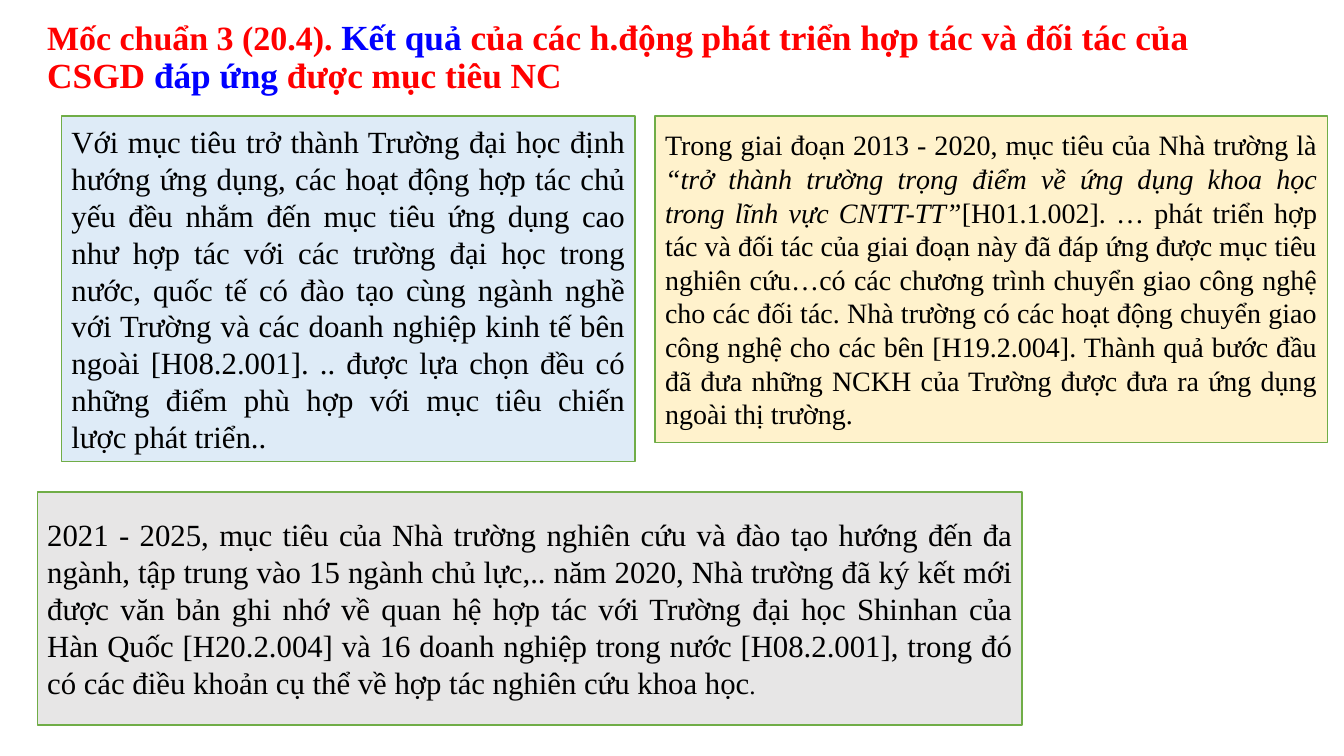
from dataclasses import dataclass

from pptx import Presentation
from pptx.dml.color import RGBColor
from pptx.enum.shapes import MSO_SHAPE
from pptx.enum.text import MSO_ANCHOR, PP_ALIGN
from pptx.util import Cm, Pt

RECTANGLE = MSO_SHAPE.RECTANGLE
MIDDLE = MSO_ANCHOR.MIDDLE
LEFT, JUSTIFY = PP_ALIGN.LEFT, PP_ALIGN.JUSTIFY


@dataclass(frozen=True)
class Theme:
    font: str = "Times New Roman"
    red: str = "FF0000"
    blue: str = "0000FF"
    ink: str = "000000"
    border: str = "70AD47"
    goal_fill: str = "DEEBF7"
    past_fill: str = "FFF2CC"
    plan_fill: str = "E7E6E6"
    label_size: float = 24.3
    title_size: float = 25.2
    body_size: float = 22
    compact_size: float = 20
    stop_size: float = 18


class SlideBuilder:
    def __init__(self, page, theme):
        self.page = page
        self.theme = theme

    def add_text(self, shape, align, spans):
        """Fill a shape with one paragraph of (text, size, colour, bold, italic) spans."""
        frame = shape.text_frame
        frame.word_wrap = True
        frame.vertical_anchor = MIDDLE
        para = frame.paragraphs[0]
        para.alignment = align
        for text, size, color, bold, italic in spans:
            span = para.add_run()
            span.text = text
            span.font.name = self.theme.font
            span.font.size = Pt(size)
            span.font.color.rgb = RGBColor.from_string(color)
            span.font.bold = bold
            span.font.italic = italic
        return para

    def title(self, place, spans):
        box = self.page.shapes.add_textbox(*map(Cm, place))
        styled = [(text, size, color, True, False) for text, size, color in spans]
        self.add_text(box, LEFT, styled).line_spacing = 0.9

    def panel(self, place, fill, spans):
        """Draw a bordered box; each span is (text, size, italic)."""
        box = self.page.shapes.add_shape(RECTANGLE, *map(Cm, place))
        box.shadow.inherit = False
        box.fill.solid()
        box.fill.fore_color.rgb = RGBColor.from_string(fill)
        box.line.color.rgb = RGBColor.from_string(self.theme.border)
        box.line.width = Pt(1)
        styled = [(text, size, self.theme.ink, False, italic) for text, size, italic in spans]
        self.add_text(box, JUSTIFY, styled)


def main():
    deck = Presentation()
    deck.slide_width, deck.slide_height = Cm(33.87), Cm(19.05)
    theme = Theme()
    builder = SlideBuilder(deck.slides.add_slide(deck.slide_layouts[6]), theme)
    left, panel_top = 0.94, 2.92

    builder.title((left, 0.28, 31.78, 2.39), [
        ("Mốc chuẩn 3 (20.4). ", theme.label_size, theme.red),
        ("Kết quả ", theme.title_size, theme.blue),
        ("của các h.động phát triển hợp tác và đối tác của CSGD ", theme.title_size, theme.red),
        ("đáp ứng ", theme.title_size, theme.blue),
        ("được mục tiêu NC", theme.title_size, theme.red),
    ])
    builder.panel((1.55, panel_top, 14.45, 8.71), theme.goal_fill, [
        ("Với mục tiêu trở thành Trường đại học định hướng ứng dụng, các hoạt động "
         "hợp tác chủ yếu đều nhắm đến mục tiêu ứng dụng cao như hợp tác với các "
         "trường đại học trong nước, quốc tế có đào tạo cùng ngành nghề với Trường "
         "và các doanh nghiệp kinh tế bên ngoài [H08.2.001]. .. được lựa chọn đều có "
         "những điểm phù hợp với mục tiêu chiến lược phát triển..",
         theme.body_size, False),
    ])
    builder.panel((16.51, panel_top, 16.94, 8.23), theme.past_fill, [
        ("Trong giai đoạn 2013 - 2020, mục tiêu của Nhà trường là ",
         theme.compact_size, False),
        ("“trở thành trường trọng điểm về ứng dụng khoa học trong lĩnh vực CNTT-TT”",
         theme.compact_size, True),
        ("[H01.1.002]. … phát triển hợp tác và đối tác của giai đoạn này đã đáp ứng "
         "được mục tiêu nghiên cứu…có các chương trình chuyển giao công nghệ cho các "
         "đối tác. Nhà trường có các hoạt động chuyển giao công nghệ cho các bên "
         "[H19.2.004]. Thành quả bước đầu đã đưa những NCKH của Trường được đưa ra "
         "ứng dụng ngoài thị trường.",
         theme.compact_size, False),
    ])
    builder.panel((left, 12.4, 24.82, 5.87), theme.plan_fill, [
        ("2021 - 2025, mục tiêu của Nhà trường nghiên cứu và đào tạo hướng đến đa "
         "ngành, tập trung vào 15 ngành chủ lực,.. năm 2020, Nhà trường đã ký kết mới "
         "được văn bản ghi nhớ về quan hệ hợp tác với Trường đại học Shinhan của Hàn "
         "Quốc [H20.2.004] và 16 doanh nghiệp trong nước [H08.2.001], trong đó có các "
         "điều khoản cụ thể về hợp tác nghiên cứu khoa học",
         theme.body_size, False),
        (".", theme.stop_size, False),
    ])
    deck.save("out.pptx")


if __name__ == "__main__":
    main()
